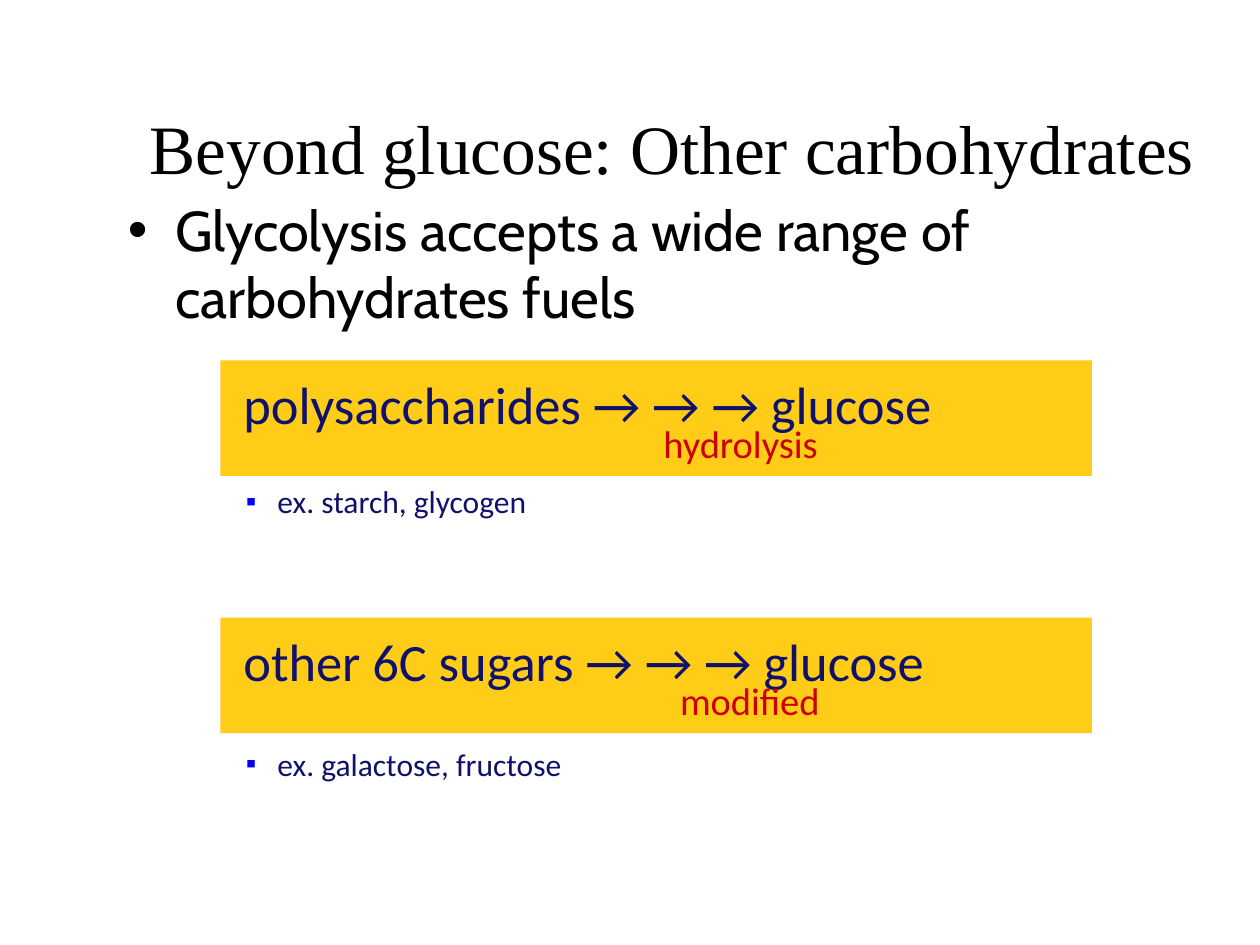
from lxml.etree import SubElement
from pptx import Presentation
from pptx.dml.color import RGBColor
from pptx.enum.shapes import MSO_SHAPE
from pptx.enum.text import MSO_ANCHOR, MSO_AUTO_SIZE, PP_ALIGN
from pptx.oxml.ns import qn
from pptx.util import Pt

BLACK = RGBColor(0x00, 0x00, 0x00)
GOLD = RGBColor(0xFF, 0xCC, 0x18)
NAVY = RGBColor(0x0F, 0x11, 0x6A)
RED = RGBColor(0xCC, 0x00, 0x00)
BULLET_BLUE = "0000FF"

# Source, conversion step, label left and width, examples, band top, examples top
PATHWAYS = [
    ("polysaccharides", "hydrolysis", 372, 124.5, "starch, glycogen", 206, 272),
    ("other 6C sugars", "modified", 381.5, 106, "galactose, fructose", 353, 422),
]


def add_bullet(paragraph, char, left, hanging, color=None, percent=None):
    properties = paragraph._p.get_or_add_pPr()
    properties.set("marL", str(Pt(left)))
    properties.set("indent", str(-Pt(hanging)))
    if color:
        bullet_color = SubElement(properties, qn("a:buClr"))
        SubElement(bullet_color, qn("a:srgbClr"), val=color)
    if percent:
        SubElement(properties, qn("a:buSzPct"), val=str(percent * 1000))
    SubElement(properties, qn("a:buFont"), typeface="Arial")
    SubElement(properties, qn("a:buChar"), char=char)


def write(holder, text, *, size, font="Calibri", color=NAVY,
          align=PP_ALIGN.LEFT, anchor=MSO_ANCHOR.TOP, wrap=True,
          grow=False, level=0, bullet=None):
    frame = holder.text_frame
    frame.word_wrap = wrap
    frame.vertical_anchor = anchor
    frame.auto_size = (MSO_AUTO_SIZE.SHAPE_TO_FIT_TEXT if grow
                       else MSO_AUTO_SIZE.NONE)
    paragraph = frame.paragraphs[0]
    paragraph.alignment = align
    paragraph.level = level
    if bullet:
        add_bullet(paragraph, **bullet)
    run = paragraph.add_run()
    run.text = text
    run.font.size = Pt(size)
    run.font.name = font
    run.font.color.rgb = color


def add_text(shapes, box, text, **text_format):
    holder = shapes.add_textbox(*map(Pt, box))
    write(holder, text, **text_format)


def add_band(shapes, box):
    band = shapes.add_shape(MSO_SHAPE.RECTANGLE, *map(Pt, box))
    band.shadow.inherit = False
    band.fill.solid()
    band.fill.fore_color.rgb = GOLD
    band.line.fill.background()
    return band


def add_pathway(slide, source, step, step_left, step_width, top):
    group = slide.shapes.add_group_shape().shapes
    add_band(group, (126, top, 498, 66))
    reaction = add_band(group, (132, top + 3, 485, 43))
    write(reaction, f"{source} → → → glucose", size=30,
          anchor=MSO_ANCHOR.MIDDLE, grow=True)
    add_text(group, (step_left, top + 30, step_width, 34), step, size=22,
             color=RED, anchor=MSO_ANCHOR.MIDDLE, wrap=False, grow=True)


def main():
    presentation = Presentation()
    presentation.slide_width = Pt(720)
    presentation.slide_height = Pt(540)
    slide = presentation.slides.add_slide(presentation.slide_layouts[6])

    # Title and main point
    add_text(slide.shapes, (48, 54, 672, 60),
             "Beyond glucose: Other carbohydrates", size=39.6,
             font="Times New Roman", color=BLACK, align=PP_ALIGN.CENTER,
             anchor=MSO_ANCHOR.MIDDLE)
    add_text(slide.shapes, (66, 108, 612, 94),
             "Glycolysis accepts a wide range of carbohydrates fuels",
             size=32, font="Cabin", color=BLACK,
             bullet=dict(char="•", left=27, hanging=27))

    # Pathways into glucose, each with its examples
    for source, step, left, width, examples, top, examples_top in PATHWAYS:
        add_pathway(slide, source, step, left, width, top)
        add_text(slide.shapes, (66, examples_top, 612, 36),
                 f"ex. {examples}", size=18, level=1,
                 bullet=dict(char="▪", left=85.5, hanging=18,
                             color=BULLET_BLUE, percent=95))

    presentation.save("out.pptx")


if __name__ == "__main__":
    main()
